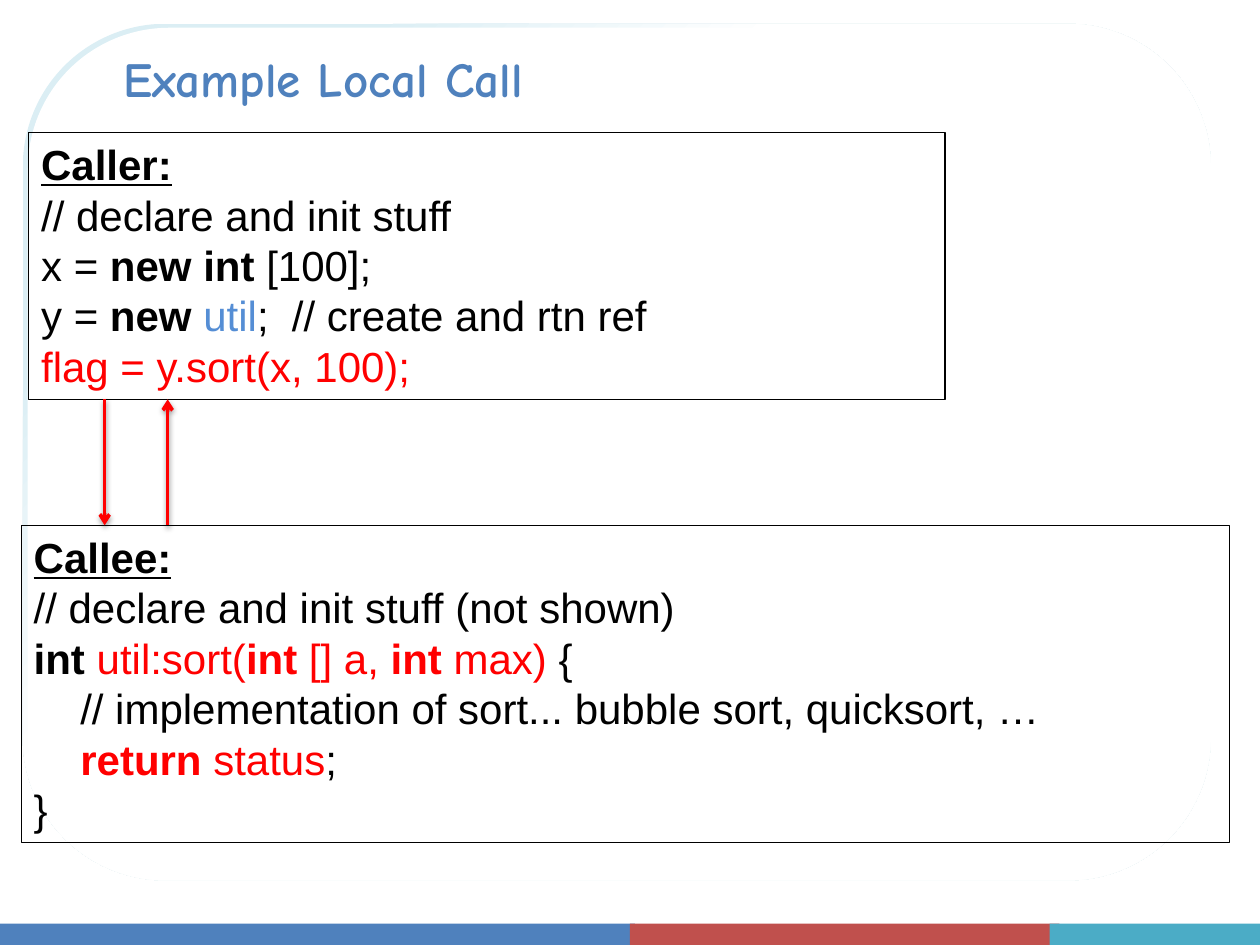
from dataclasses import dataclass

from lxml import etree
from pptx import Presentation
from pptx.dml.color import RGBColor
from pptx.enum.shapes import MSO_CONNECTOR, MSO_SHAPE
from pptx.enum.text import MSO_ANCHOR, MSO_AUTO_SIZE, PP_ALIGN
from pptx.oxml import parse_xml
from pptx.oxml.ns import nsdecls, qn
from pptx.util import Cm, Pt


@dataclass(frozen=True)
class Theme:
    blue: str = "4F81BD"
    brick: str = "C0504D"
    teal: str = "4BACC6"
    pale: str = "DBEEF4"
    white: str = "FFFFFF"
    black: str = "000000"
    red: str = "FF0000"
    util: str = "558ED5"
    title_font: str = "Comic Neue"
    code_font: str = "Arial"
    title_size: int = 28
    code_size: int = 24
    box_line: float = 0.75
    arrow_line: float = 2


T = Theme()
SHADOW = (
    f'<a:effectLst {nsdecls("a")}><a:outerShdw blurRad="{Pt(3.1)}" dist="{Pt(1.6)}" '
    'dir="5400000" rotWithShape="0"><a:srgbClr val="000000"><a:alpha val="38000"/>'
    "</a:srgbClr></a:outerShdw></a:effectLst>"
)


class SlideBuilder:
    def __init__(self, slide):
        self.slide = slide
        self.shapes = slide.shapes

    def add_run(self, p, text, font, size, color=T.black, bold=False, underline=False):
        r = p.add_run()
        r.text = text
        r.font.name, r.font.size = font, Pt(size)
        r.font.bold, r.font.underline = bold, underline
        r.font.color.rgb = RGBColor.from_string(color)

    def panel(self, kind, x, y, w, h, color=None):
        sp = self.shapes.add_shape(kind, Cm(x), Cm(y), Cm(w), Cm(h))
        sp.shadow.inherit = False
        sp.line.fill.background()
        if color:
            sp.fill.solid()
            sp.fill.fore_color.rgb = RGBColor.from_string(color)
        else:
            sp.fill.background()
        return sp

    def gradient_panel(self, kind, x, y, w, h, stops):
        sp = self.panel(kind, x, y, w, h)
        sp.fill.gradient()
        sp.fill.gradient_angle = 315
        for stop, (position, color) in zip(sp.fill.gradient_stops, stops):
            stop.position = position
            stop.color.rgb = RGBColor.from_string(color)

    def title(self, text, x, y, w, h):
        sp = self.shapes.title
        sp.left, sp.top, sp.width, sp.height = Cm(x), Cm(y), Cm(w), Cm(h)
        # Bring the title in front of the background panels
        self.shapes.element.append(sp.element)
        tf = sp.text_frame
        tf.vertical_anchor = MSO_ANCHOR.BOTTOM
        tf.auto_size = MSO_AUTO_SIZE.NONE
        p = tf.paragraphs[0]
        p.alignment, p.line_spacing = PP_ALIGN.LEFT, 0.9
        self.add_run(p, text, T.title_font, T.title_size, T.blue, bold=True)

    def code_box(self, x, y, w, h, heading, lines):
        """Each line is (indent in cm, runs); each run is (text, color, bold)."""
        sp = self.panel(MSO_SHAPE.RECTANGLE, x, y, w, h)
        sp.line.color.rgb = RGBColor.from_string(T.black)
        sp.line.width = Pt(T.box_line)
        tf = sp.text_frame
        tf.word_wrap = True
        tf.vertical_anchor = MSO_ANCHOR.TOP
        p = tf.paragraphs[0]
        p.alignment = PP_ALIGN.LEFT
        self.add_run(p, heading, T.code_font, T.code_size, bold=True, underline=True)
        for indent, runs in lines:
            p = tf.add_paragraph()
            p.alignment = PP_ALIGN.LEFT
            if indent:
                pPr = p._p.get_or_add_pPr()
                pPr.set("marL", str(Cm(indent)))
                pPr.set("indent", "0")
            for text, color, bold in runs:
                self.add_run(p, text, T.code_font, T.code_size, color, bold)

    def arrow(self, x, y1, y2):
        cx = self.shapes.add_connector(
            MSO_CONNECTOR.STRAIGHT, Cm(x), Cm(y1), Cm(x), Cm(y2))
        cx.line.color.rgb = RGBColor.from_string(T.red)
        cx.line.width = Pt(T.arrow_line)
        etree.SubElement(cx.line._get_or_add_ln(), qn("a:tailEnd"), type="arrow")
        cx._element.spPr.append(parse_xml(SHADOW))


def main():
    prs = Presentation()
    prs.slide_width, prs.slide_height = Cm(25.4), Cm(19.05)
    s = SlideBuilder(prs.slides.add_slide(prs.slide_layouts[5]))

    # Footer stripe
    for x, w, color in ((0, 12.8, T.blue), (12.7, 8.66, T.brick), (21.16, 4.24, T.teal)):
        s.panel(MSO_SHAPE.RECTANGLE, x, 18.62, w, 0.43, color)

    # Rounded frame: a fading panel with a white one inside
    s.gradient_panel(MSO_SHAPE.ROUNDED_RECTANGLE, 0.46, 0.48, 23.95, 17.27,
                     ((0.17, T.pale), (0.37, T.white)))
    s.panel(MSO_SHAPE.ROUNDED_RECTANGLE, 0.56, 0.56, 23.75, 17.12, T.white)

    s.title("Example Local Call", 2.24, 0.99, 21.59, 1.32)

    # Code of both sides
    caller_bottom, callee_top, code_indent = 8.05, 10.59, 0.94
    s.code_box(0.58, 2.67, 18.47, caller_bottom - 2.67, "Caller:", [
        (0, [("// declare and init stuff", T.black, False)]),
        (0, [("x = ", T.black, False), ("new int ", T.black, True),
             ("[100];", T.black, False)]),
        (0, [("y = ", T.black, False), ("new ", T.black, True),
             ("util", T.util, False), (";  // create and rtn ref", T.black, False)]),
        (0, [("flag = y.sort(x, 100);", T.red, False)]),
    ])
    s.code_box(0.43, callee_top, 24.36, 6.4, "Callee:", [
        (0, [("// declare and init stuff (not shown)", T.black, False)]),
        (0, [("int ", T.black, True), ("util:sort(", T.red, False),
             ("int", T.red, True), (" [] a, ", T.red, False),
             ("int", T.red, True), (" max) ", T.red, False), ("{", T.black, False)]),
        (code_indent, [("// implementation of sort... bubble sort, quicksort, …",
                        T.black, False)]),
        (code_indent, [("return", T.red, True), (" status", T.red, False),
                       (";", T.black, False)]),
        (0, [("}", T.black, False)]),
    ])

    # Call and return
    s.arrow(2.11, caller_bottom, callee_top)
    s.arrow(3.38, callee_top, caller_bottom)

    prs.save("out.pptx")


if __name__ == "__main__":
    main()
